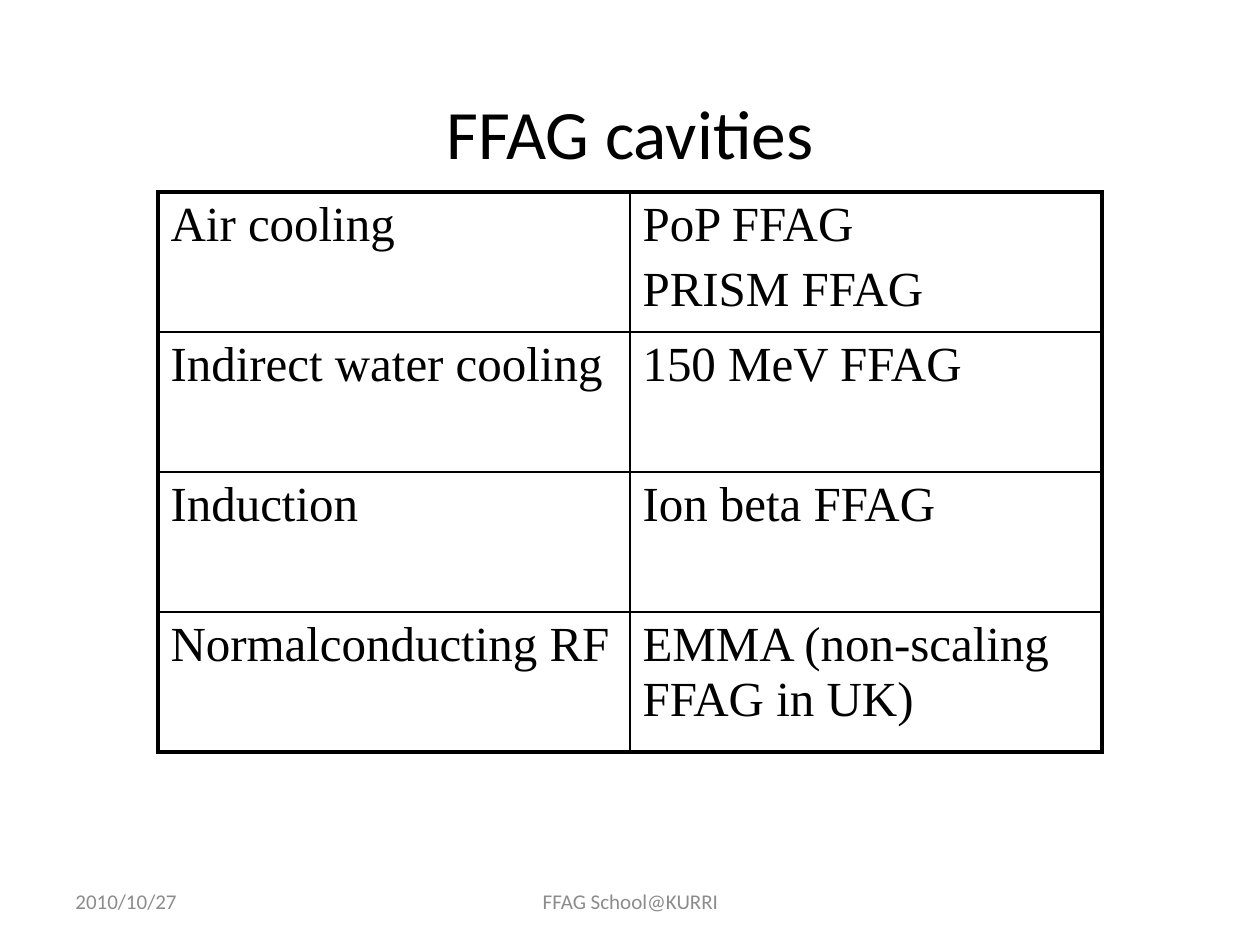
from lxml import etree
from pptx import Presentation
from pptx import util as u
from pptx.dml.color import RGBColor
from pptx.enum import text
from pptx.oxml.ns import qn

PX = u.Inches(1) // 126
COLORS = {"ink": "000000", "muted": "8C8C8C"}
CENTER, LEFT = text.PP_ALIGN.CENTER, text.PP_ALIGN.LEFT

# words, box in px, size in pt, colour, alignment
LABELS = [
    ("FFAG cavities", (94, 84, 1072, 95), 39.6, "ink", CENTER),
    ("2010/10/27", (63, 876, 294, 50), 12, "muted", LEFT),
    ("FFAG School@KURRI", (431, 876, 399, 50), 12, "muted", CENTER),
]
CAVITIES = [
    (["Air cooling"], ["PoP FFAG", "PRISM FFAG"]),
    (["Indirect water cooling"], ["150 MeV FFAG"]),
    (["Induction"], ["Ion beta FFAG"]),
    (["Normalconducting RF"], ["EMMA (non-scaling FFAG in UK)"]),
]
LEFT_X, TOP_Y, COL_W, ROW_H = 158, 192, 472, 140
OUTER, INNER = 2.25, 1


def add_run(par, words, size, font, color):
    run = par.add_run()
    run.text = words
    run.font.size = u.Pt(size)
    run.font.name = font
    run.font.color.rgb = RGBColor.from_string(COLORS[color])


def add_label(slide, words, box, size, color, align):
    frame = slide.shapes.add_textbox(*(v * PX for v in box)).text_frame
    frame.word_wrap = True
    frame.vertical_anchor = text.MSO_ANCHOR.MIDDLE
    par = frame.paragraphs[0]
    par.alignment = align
    add_run(par, words, size, "Calibri", color)


def set_edges(cell, widths):
    """Draw the left, right, top and bottom borders, widths in points."""
    props = cell._tc.get_or_add_tcPr()
    for i, (side, width) in enumerate(zip("LRTB", widths)):
        line = etree.Element(qn(f"a:ln{side}"), w=str(u.Pt(width)))
        fill = etree.SubElement(line, qn("a:solidFill"))
        etree.SubElement(fill, qn("a:srgbClr"), val=COLORS["ink"])
        props.insert(i, line)


def fill_cell(cell, lines):
    cell.fill.background()
    frame = cell.text_frame
    for i, words in enumerate(lines):
        par = frame.add_paragraph() if i else frame.paragraphs[0]
        if i:
            par.space_before = u.Pt(5.6)
        add_run(par, words, 28, "Times New Roman", "ink")


def add_grid(slide):
    rows, cols = len(CAVITIES), len(CAVITIES[0])
    box = (LEFT_X, TOP_Y, cols * COL_W, rows * ROW_H)
    table = slide.shapes.add_table(rows, cols, *(v * PX for v in box)).table
    table.first_row = table.horz_banding = False
    for col in table.columns:
        col.width = COL_W * PX
    for r, entry in enumerate(CAVITIES):
        table.rows[r].height = ROW_H * PX
        for c, lines in enumerate(entry):
            cell = table.cell(r, c)
            fill_cell(cell, lines)
            outside = (c == 0, c == cols - 1, r == 0, r == rows - 1)
            set_edges(cell, [OUTER if edge else INNER for edge in outside])


def main():
    deck = Presentation()
    deck.slide_width, deck.slide_height = u.Inches(10), u.Inches(7.5)
    slide = deck.slides.add_slide(deck.slide_layouts[6])
    add_grid(slide)
    for label in LABELS:
        add_label(slide, *label)
    deck.save("out.pptx")


if __name__ == "__main__":
    main()
